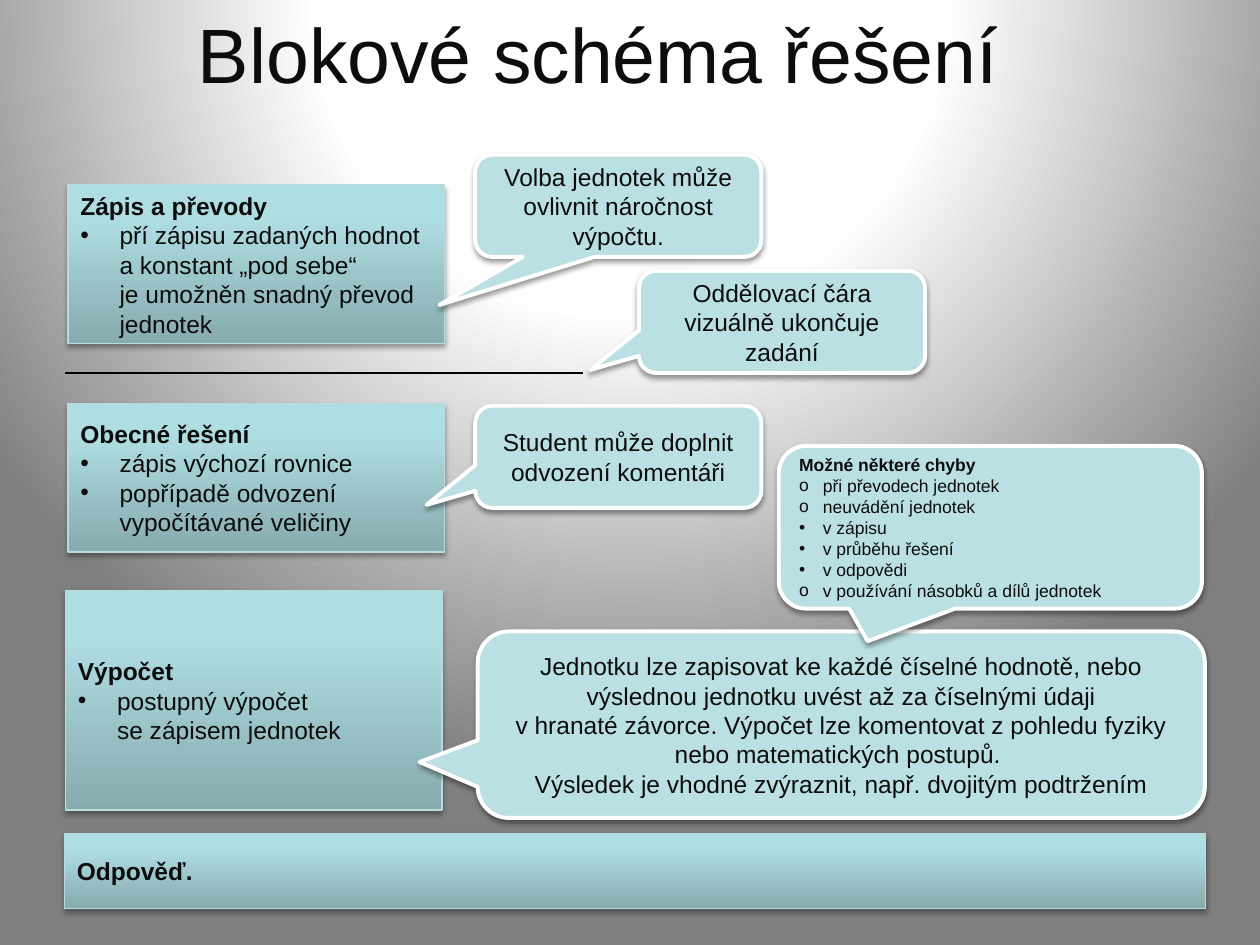
from copy import deepcopy

from lxml.etree import SubElement as Sub
from pptx import Presentation
from pptx.dml.color import RGBColor as Rgb
from pptx.enum.shapes import MSO_CONNECTOR as Conn, MSO_SHAPE as Kind
from pptx.enum.text import MSO_ANCHOR as Anchor, MSO_AUTO_SIZE as Auto, PP_ALIGN as Align
from pptx.oxml.ns import qn
from pptx.util import Cm, Pt

INK = Rgb(0x0D, 0x0D, 0x0D)
BLACK = Rgb(0, 0, 0)
WHITE = Rgb(0xFF, 0xFF, 0xFF)
PALE = Rgb(0xBB, 0xE0, 0xE3)
EDGE = Rgb(0xB6, 0xDC, 0xDF)
GLOW = [(0, WHITE), (40, Rgb(0xFE, 0xFE, 0xFE)), (100, Rgb(0x7F, 0x7F, 0x7F))]
TEAL = [(0, Rgb(0x87, 0xAB, 0xAE)), (80, Rgb(0xAF, 0xDE, 0xE2)), (100, Rgb(0xAF, 0xE0, 0xE4))]

FONT = {"name": "Arial", "size": Pt(14), "bold": False}
FRAME = {"word_wrap": True, "auto_size": Auto.NONE, "vertical_anchor": Anchor.MIDDLE}
SMALL = (5.77, 2.06)

# Left, top, width, height; heading; bullet points
BLOCKS = [
    ((1.37, 3.73, 7.59, 3.2), "Zápis a převody",
     ["pří zápisu zadaných hodnot a konstant „pod sebe“ \nje umožněn snadný převod jednotek"]),
    ((1.37, 8.13, 7.59, 3), "Obecné řešení",
     ["zápis výchozí rovnice", "popřípadě odvození vypočítávané veličiny"]),
    ((1.32, 11.91, 7.59, 4.42), "Výpočet", ["postupný výpočet \nse zápisem jednotek"]),
    ((1.3, 16.81, 23.01, 1.5), "Odpověď.", []),
]

# Left, top, width, height; tip of the tail; paragraphs
NOTES = [
    ((9.58, 3.12, *SMALL), (-0.625, 0.97), ["Volba jednotek může ovlivnit náročnost výpočtu."]),
    ((12.88, 5.46, *SMALL), (-0.67, 0.47), ["Oddělovací čára vizuálně ukončuje zadání"]),
    ((9.58, 8.18, *SMALL), (-0.67, 0.47), ["Student může doplnit odvození komentáři"]),
    ((9.63, 12.73, 14.66, 3.76), (-0.58, 0.2),
     ["Jednotku lze zapisovat ke každé číselné hodnotě, nebo výslednou jednotku uvést až za "
      "číselnými údaji\nv hranaté závorce. Výpočet lze komentovat z pohledu fyziky nebo "
      "matematických postupů. ",
      "Výsledek je vhodné zvýraznit, např. dvojitým podtržením"]),
]

# Bullet, level, text
ERRORS = [
    ("o", 0, "při převodech jednotek"),
    ("o", 0, "neuvádění jednotek"),
    ("•", 8, "v zápisu"),
    ("•", 8, "v průběhu řešení"),
    ("•", 8, "v odpovědi"),
    ("o", 0, "v používání násobků a dílů jednotek"),
]


def put(obj, form):
    for name, value in form.items():
        setattr(obj, name, value)


def blend(fill, root, stops):
    """Give the fill its colour stops and return its gradient element, without a direction."""
    fill.gradient()
    grad = next(root.iter(qn("a:gradFill")))
    for part in list(grad):
        grad.remove(part)
    row = Sub(grad, qn("a:gsLst"))
    for pos, tint in stops:
        stop = Sub(row, qn("a:gs"), pos=str(pos * 1000))
        Sub(stop, qn("a:srgbClr"), val=str(tint))
    return grad


def paint_back(slide):
    grad = blend(slide.background.fill, slide.element, GLOW)
    ring = Sub(grad, qn("a:path"), path="circle")
    Sub(ring, qn("a:fillToRect"), l="50000", t="-80000", r="50000", b="180000")


def shade(shape, drop, alpha):
    """Cast a soft shadow straight down."""
    shape.shadow.inherit = False
    box = shape.element.spPr.find(qn("a:effectLst"))
    cast = Sub(box, qn("a:outerShdw"), blurRad=str(Pt(3.1)), dist=str(Pt(drop)),
               dir="5400000", rotWithShape="0")
    tint = Sub(cast, qn("a:srgbClr"), val=str(BLACK))
    Sub(tint, qn("a:alpha"), val=str(alpha * 1000))


def write(par, text, align=Align.LEFT, **form):
    par.text = text
    par.alignment = align
    for run in par.runs:
        put(run.font, FONT | form)
        run.font.color.rgb = INK
    for brk in par._p.findall(qn("a:br")):
        brk.append(deepcopy(par.runs[0].font._element))


def mark(par, sign, dent):
    props = par._p.get_or_add_pPr()
    props.set("marL", str(Cm(dent)))
    props.set("indent", str(-Cm(dent)))
    Sub(props, qn("a:buFont"), typeface="Arial")
    Sub(props, qn("a:buChar"), char=sign)


def add_list(frame, head, items, dent, size):
    write(frame.paragraphs[0], head, size=size, bold=True)
    for sign, level, text in items:
        par = frame.add_paragraph()
        par.level = level
        write(par, text, size=size)
        mark(par, sign, dent)


def add_block(slide, area, head, points):
    box = slide.shapes.add_shape(Kind.RECTANGLE, *map(Cm, area))
    grad = blend(box.fill, box.element, TEAL)
    Sub(grad, qn("a:lin"), ang="16200000", scaled="0")
    box.line.color.rgb = EDGE
    box.line.width = Pt(0.75)
    shade(box, 1.8, 35)
    put(box.text_frame, FRAME)
    add_list(box.text_frame, head, [("•", 0, text) for text in points], 0.79, Pt(14))


def add_note(slide, area, tip):
    """Add an empty speech bubble and return its text frame."""
    note = slide.shapes.add_shape(Kind.ROUNDED_RECTANGULAR_CALLOUT, *map(Cm, area))
    for i, value in enumerate((*tip, 0.167)):
        note.adjustments[i] = value
    note.fill.solid()
    note.fill.fore_color.rgb = PALE
    note.line.color.rgb = WHITE
    note.line.width = Pt(2.25)
    shade(note, 1.6, 38)
    put(note.text_frame, FRAME)
    return note.text_frame


def add_rule(slide, left, right, top):
    rule = slide.shapes.add_connector(Conn.STRAIGHT, Cm(left), Cm(top), Cm(right), Cm(top))
    rule.line.color.rgb = BLACK
    rule.line.width = Pt(0.75)
    Sub(rule.element.spPr, qn("a:effectLst"))


def add_title(slide, text):
    title = slide.shapes.title
    put(title, {"left": Cm(0), "top": Cm(0), "width": Cm(24.13), "height": Cm(2.13)})
    put(title.text_frame, FRAME)
    write(title.text_frame.paragraphs[0], text, Align.CENTER, size=Pt(44))


def main():
    deck = Presentation()
    put(deck, {"slide_width": Cm(25.4), "slide_height": Cm(19.05)})
    slide = deck.slides.add_slide(deck.slide_layouts.get_by_name("Title Only"))
    paint_back(slide)
    add_title(slide, "Blokové schéma řešení")
    for block in BLOCKS:
        add_block(slide, *block)
    add_rule(slide, 1.32, 11.76, 7.52)
    for area, tip, texts in NOTES:
        frame = add_note(slide, area, tip)
        for i, text in enumerate(texts):
            par = frame.add_paragraph() if i else frame.paragraphs[0]
            write(par, text, Align.CENTER)
    frame = add_note(slide, (15.7, 8.99, 8.53, 3.28), (-0.29, 0.7))
    add_list(frame, "Možné některé chyby", ERRORS, 0.48, Pt(10))
    deck.save("out.pptx")


if __name__ == "__main__":
    main()
